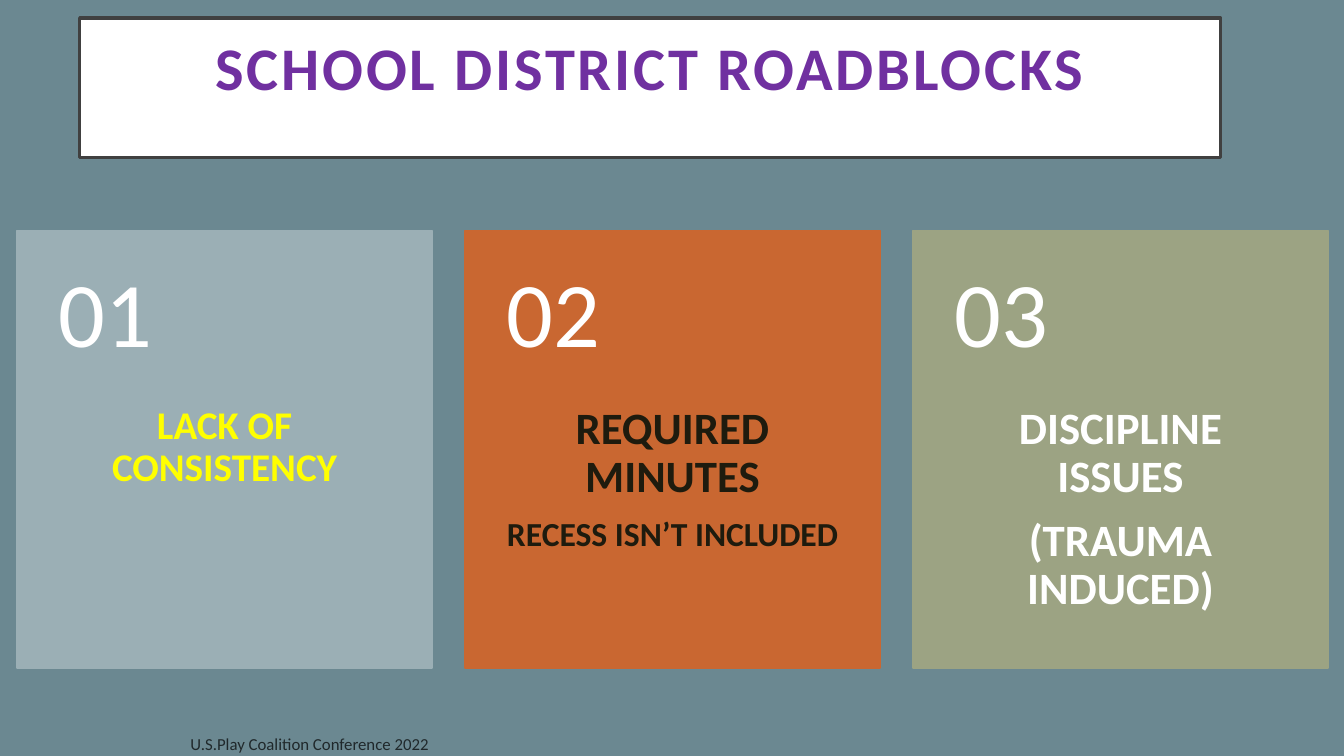
from dataclasses import dataclass

import pptx
import pptx.dml.color
import pptx.enum.shapes
import pptx.enum.text
import pptx.oxml.ns
import pptx.util
from lxml import etree

Cm, Pt = pptx.util.Cm, pptx.util.Pt
Align, Anchor = pptx.enum.text.PP_ALIGN, pptx.enum.text.MSO_ANCHOR


@dataclass(frozen=True)
class Theme:
    font: str = "Calibri"
    background: str = "6B8891"
    white: str = "FFFFFF"
    black: str = "000000"
    frame: str = "404040"
    title: str = "7030A0"
    yellow: str = "FFFF00"
    dark: str = "1E1B0E"
    blue_gray: str = "9BAFB5"
    orange: str = "C96731"
    olive: str = "9CA383"
    title_size: float = 43.2
    number_size: int = 66
    large: int = 32
    medium: int = 28
    small: int = 24
    footer_size: int = 12


THEME = Theme()

# Card fill, text colour, and (text, size) lines
CARDS = [
    (THEME.blue_gray, THEME.yellow, [("LACK OF CONSISTENCY", THEME.medium)]),
    (THEME.orange, THEME.dark, [("REQUIRED MINUTES", THEME.large),
                                ("RECESS ISN’T INCLUDED", THEME.small)]),
    (THEME.olive, THEME.white, [("DISCIPLINE ISSUES", THEME.large),
                                ("(TRAUMA INDUCED)", THEME.large)]),
]
CARD_LEFT, CARD_TOP, CARD_PITCH = 0.43, 5.81, 11.29
CARD_WIDTH, CARD_HEIGHT, NUMBER_HEIGHT = 10.46, 11.02, 4.41


def rgb(color):
    return pptx.dml.color.RGBColor.from_string(color)


def add_box(s, left, top, width, height, fill, line, line_width):
    sp = s.shapes.add_shape(pptx.enum.shapes.MSO_SHAPE.RECTANGLE,
                            Cm(left), Cm(top), Cm(width), Cm(height))
    sp.shadow.inherit = False
    sp.fill.solid()
    sp.fill.fore_color.rgb = rgb(fill)
    sp.line.color.rgb = rgb(line)
    sp.line.width = Pt(line_width)
    return sp


def set_text(sp, lines, color, insets, align=Align.LEFT, anchor=Anchor.TOP,
             bold=False, spacing=0.9, after=0.0):
    """Fill a shape with (text, size) lines; after is a share of the size."""
    tf = sp.text_frame
    tf.word_wrap = True
    tf.vertical_anchor = anchor
    tf.margin_left, tf.margin_top, tf.margin_right, tf.margin_bottom = map(Cm, insets)
    for i, (text, size) in enumerate(lines):
        p = tf.add_paragraph() if i else tf.paragraphs[0]
        p.alignment = align
        p.line_spacing = spacing
        p.space_after = Pt(round(size * after))
        p.font.name = THEME.font
        p.font.size = Pt(size)
        p.font.bold = bold
        p.font.color.rgb = rgb(color)
        p.add_run().text = text
    return tf


def add_text(s, left, top, width, height, *args, **kwargs):
    sp = s.shapes.add_textbox(Cm(left), Cm(top), Cm(width), Cm(height))
    return set_text(sp, *args, **kwargs)


def add_title(s, text):
    sp = add_box(s, 2.01, 0.46, 28.75, 3.51, THEME.white, THEME.frame, 2.5)
    tf = set_text(sp, [(text, THEME.title_size)], THEME.title, [0.51] * 4,
                  Align.CENTER, bold=True)
    # Letter spacing in hundredths of a point
    tf.paragraphs[0].runs[0].font._element.set("spc", "200")


def add_card(s, index, fill, color, lines):
    left = CARD_LEFT + index * CARD_PITCH
    add_box(s, left, CARD_TOP, CARD_WIDTH, CARD_HEIGHT, fill, fill, 1)
    add_text(s, left, CARD_TOP + NUMBER_HEIGHT, CARD_WIDTH, CARD_HEIGHT - NUMBER_HEIGHT,
             lines, color, (1.04, 0, 1.04, 0.91), Align.CENTER, bold=True, after=0.35)
    add_text(s, left, CARD_TOP, CARD_WIDTH, NUMBER_HEIGHT,
             [(f"{index + 1:02d}", THEME.number_size)], THEME.white,
             (1.04, 0.46, 1.04, 0.46), anchor=Anchor.MIDDLE, after=0.35)


def add_footer(s, text):
    tf = add_text(s, 4.55, 18.42, 25.4, 0.64, [(text, THEME.footer_size)], THEME.black,
                  (0.25, 0.13, 0.25, 0.13), anchor=Anchor.MIDDLE, spacing=1.0)
    # Let the background show through the text
    qn = pptx.oxml.ns.qn
    for color in tf._txBody.iter(qn("a:srgbClr")):
        etree.SubElement(color, qn("a:alpha"), val="70000")


def main():
    prs = pptx.Presentation()
    prs.slide_width, prs.slide_height = Cm(33.87), Cm(19.05)
    s = prs.slides.add_slide(prs.slide_layouts[6])
    s.background.fill.solid()
    s.background.fill.fore_color.rgb = rgb(THEME.background)

    add_title(s, "SCHOOL DISTRICT ROADBLOCKS")
    for index, card in enumerate(CARDS):
        add_card(s, index, *card)
    add_footer(s, "U.S.Play Coalition Conference 2022")

    prs.save("out.pptx")


if __name__ == "__main__":
    main()
